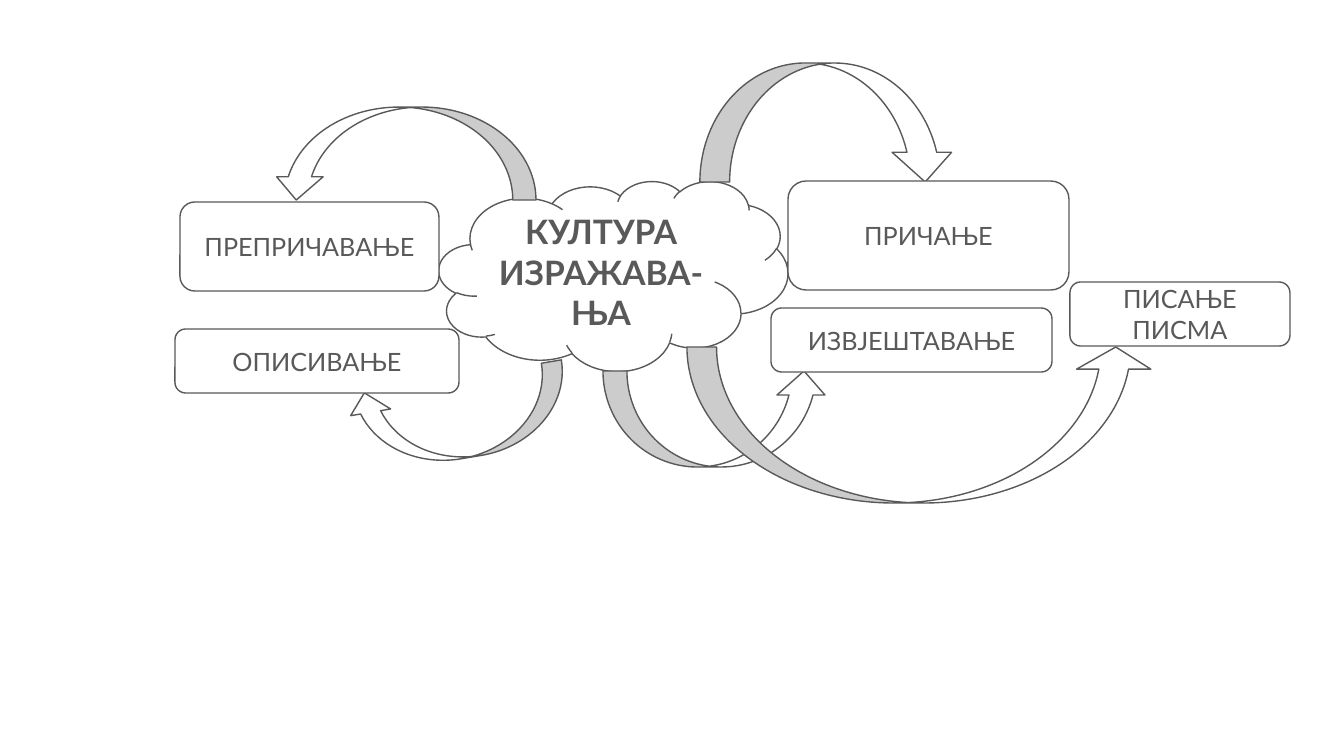
from dataclasses import dataclass

from pptx import Presentation
from pptx.dml.color import RGBColor
from pptx.enum.shapes import MSO_SHAPE
from pptx.enum.text import MSO_ANCHOR, PP_ALIGN
from pptx.oxml.ns import qn
from pptx.util import Pt

CLOUD = MSO_SHAPE.CLOUD
BOX = MSO_SHAPE.ROUNDED_RECTANGLE
UP_ARROW = MSO_SHAPE.CURVED_UP_ARROW
LEFT_ARROW = MSO_SHAPE.CURVED_LEFT_ARROW
CENTER = PP_ALIGN.CENTER
MIDDLE = MSO_ANCHOR.MIDDLE

SLIDE_SIZE = (1344, 756)

# Places are left, top, width, height in px
TOPIC = ("КУЛТУРА ИЗРАЖАВА-ЊА", (439, 181, 349, 190))
BRANCHES = [
    {"text": "ПРЕПРИЧАВАЊЕ", "box": (180, 202, 259, 89),
     "arrow": (273, 107, 263, 93), "rotation": 180},
    {"text": "ПРИЧАЊЕ", "box": (788, 181, 281, 109),
     "arrow": (700, 63, 255, 119), "rotation": 180, "flip": True},
    {"text": "ИЗВЈЕШТАВАЊЕ", "box": (771, 308, 281, 64),
     "arrow": (603, 371, 225, 96)},
    {"text": "ОПИСИВАЊЕ", "box": (175, 329, 284, 64),
     "arrow": (419, 308, 81, 220), "kind": LEFT_ARROW, "rotation": 80.5},
    {"text": "ПИСАЊЕ ПИСМА", "box": (1070, 282, 220, 64),
     "arrow": (687, 347, 466, 156), "adjustments": (0.19, 0.476, 0.142)},
]


@dataclass(frozen=True)
class Theme:
    font: str = "Lato"
    ink: RGBColor = RGBColor(0x59, 0x59, 0x59)
    paper: RGBColor = RGBColor(0xFF, 0xFF, 0xFF)
    line: Pt = Pt(1)
    topic_size: Pt = Pt(24)
    branch_size: Pt = Pt(18)


THEME = Theme()


def px(length):
    return round(length * 914400 / 100.8)


def add_outlined(slide, kind, place):
    shape = slide.shapes.add_shape(kind, *map(px, place))
    shape.shadow.inherit = False
    shape.fill.solid()
    shape.fill.fore_color.rgb = THEME.paper
    shape.line.color.rgb = THEME.ink
    shape.line.width = THEME.line
    return shape


def add_label(slide, kind, place, text, size, bold=False):
    frame = add_outlined(slide, kind, place).text_frame
    frame.word_wrap = True
    frame.vertical_anchor = MIDDLE
    paragraph = frame.paragraphs[0]
    paragraph.text = text
    paragraph.alignment = CENTER
    font = paragraph.font
    font.name = THEME.font
    font.size = size
    font.bold = bold
    font.color.rgb = THEME.ink


def add_arrow(slide, branch):
    arrow = add_outlined(slide, branch.get("kind", UP_ARROW), branch["arrow"])
    arrow.rotation = branch.get("rotation", 0)
    if branch.get("flip"):
        arrow.element.spPr.find(qn("a:xfrm")).set("flipH", "1")
    for index, value in enumerate(branch.get("adjustments", ())):
        arrow.adjustments[index] = value


def main():
    presentation = Presentation()
    presentation.slide_width, presentation.slide_height = map(px, SLIDE_SIZE)
    slide = presentation.slides.add_slide(presentation.slide_layouts[6])

    text, place = TOPIC
    add_label(slide, CLOUD, place, text, THEME.topic_size, bold=True)
    for branch in BRANCHES:
        add_arrow(slide, branch)
        add_label(slide, BOX, branch["box"], branch["text"], THEME.branch_size)

    presentation.save("out.pptx")


if __name__ == "__main__":
    main()
